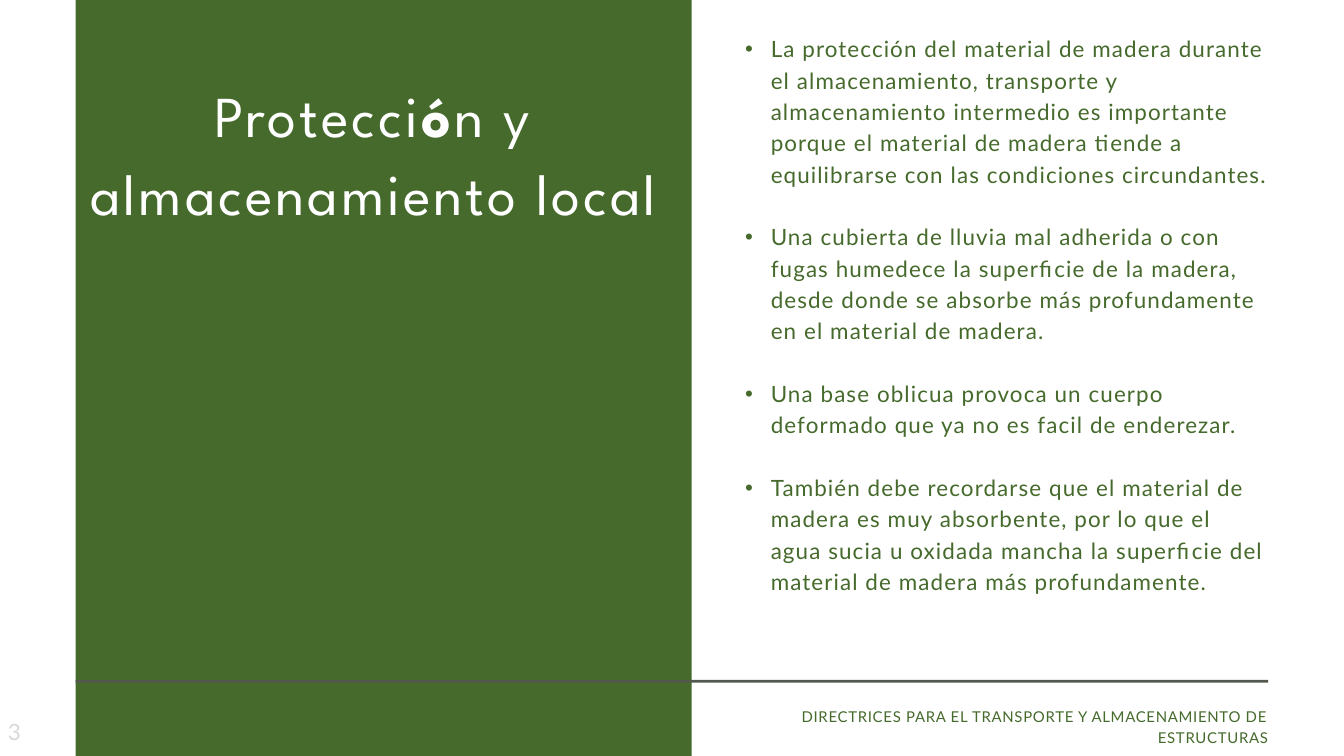
from lxml import etree
from pptx import Presentation
from pptx.dml.color import RGBColor
from pptx.enum.shapes import MSO_SHAPE
from pptx.enum.text import MSO_ANCHOR, PP_ALIGN
from pptx.oxml.ns import qn
from pptx.util import Pt

RECTANGLE = MSO_SHAPE.RECTANGLE
LEFT, CENTER, RIGHT = PP_ALIGN.LEFT, PP_ALIGN.CENTER, PP_ALIGN.RIGHT
MIDDLE, TOP = MSO_ANCHOR.MIDDLE, MSO_ANCHOR.TOP

# Content
TITLE = [("Protecci", False), ("ó", True), ("n y almacenamiento local", False)]
POINTS = [
    "La protección del material de madera durante el almacenamiento, transporte y "
    "almacenamiento intermedio es importante porque el material de madera tiende a "
    "equilibrarse con las condiciones circundantes.",
    "Una cubierta de lluvia mal adherida o con fugas humedece la superficie de la madera, "
    "desde donde se absorbe más profundamente en el material de madera.",
    "Una base oblicua provoca un cuerpo deformado que ya no es facil de enderezar.",
    "También debe recordarse que el material de madera es muy absorbente, por lo que el "
    "agua sucia u oxidada mancha la superficie del material de madera más profundamente.",
]
FOOTER = "DIRECTRICES PARA EL TRANSPORTE Y ALMACENAMIENTO DE ESTRUCTURAS"
PAGE_NUMBER = "3"

# Layout and style, in points
WIDTH, HEIGHT = 1440, 810
MARGIN_LEFT, MARGIN_RIGHT = 81, 1358.8
PANEL_WIDTH = 660
RULE_TOP, RULE_HEIGHT = 728.5, 3
BULLET_INDENT = 27.36
BODY_LINE = 33.6
GREEN, GRAY, WHITE, PALE = "456A2C", "52584D", "FFFFFF", "D9D9D9"


def color(value):
    return RGBColor.from_string(value)


def add_block(slide, left, top, width, height, fill):
    shape = slide.shapes.add_shape(RECTANGLE, Pt(left), Pt(top), Pt(width), Pt(height))
    shape.shadow.inherit = False
    shape.fill.solid()
    shape.fill.fore_color.rgb = color(fill)
    shape.line.fill.background()


def add_text(slide, left, top, width, height, paragraphs, size, fill, spacing,
             font="Lato", align=LEFT, line=None, gap=0, bullet=False, anchor=TOP):
    """Each paragraph is a list of (text, bold) runs; spacing is between letters."""
    box = slide.shapes.add_textbox(Pt(left), Pt(top), Pt(width), Pt(height))
    frame = box.text_frame
    frame.word_wrap = True
    frame.vertical_anchor = anchor
    frame.margin_left = frame.margin_right = 0
    frame.margin_top = frame.margin_bottom = 0
    for index, runs in enumerate(paragraphs):
        paragraph = frame.add_paragraph() if index else frame.paragraphs[0]
        paragraph.alignment = align
        if line:
            paragraph.line_spacing = Pt(line)
        if index:
            paragraph.space_before = Pt(gap)
        if bullet:
            properties = paragraph._p.get_or_add_pPr()
            properties.set("marL", str(Pt(BULLET_INDENT)))
            properties.set("indent", str(-Pt(BULLET_INDENT)))
            etree.SubElement(properties, qn("a:buFont")).set("typeface", "Arial")
            etree.SubElement(properties, qn("a:buChar")).set("char", "•")
        for text, bold in runs:
            run = paragraph.add_run()
            run.text = text
            run.font.name = font
            run.font.size = Pt(size)
            run.font.bold = bold
            run.font.color.rgb = color(fill)
            run._r.get_or_add_rPr().set("spc", str(round(spacing * 100)))


presentation = Presentation()
presentation.slide_width, presentation.slide_height = Pt(WIDTH), Pt(HEIGHT)
slide = presentation.slides.add_slide(presentation.slide_layouts[6])

# Bulleted points on the right
add_text(slide, 798.5, 33, 560.3, 615.6, [[(point, False)] for point in POINTS],
         24, GREEN, 1.2, line=BODY_LINE, gap=BODY_LINE, bullet=True)

# Green panel and the rule across it
add_block(slide, MARGIN_LEFT, 0, PANEL_WIDTH, HEIGHT, GREEN)
add_block(slide, MARGIN_LEFT, RULE_TOP, MARGIN_RIGHT - MARGIN_LEFT, RULE_HEIGHT, GRAY)

# Title on the panel
add_text(slide, MARGIN_LEFT, 75.6, 638.6, 252, [TITLE], 62, WHITE, 3.1,
         font="League Spartan", align=CENTER, line=83.7)

# Page number and footer
add_text(slide, 8.6, 769.7, 153.4, 28.8, [[(PAGE_NUMBER, False)]], 24, PALE, 1.2,
         anchor=MIDDLE)
add_text(slide, 760, 755.3, MARGIN_RIGHT - 760, 20.9, [[(FOOTER, False)]], 16, GREEN, 0.8,
         align=RIGHT, line=22.4)

presentation.save("out.pptx")
